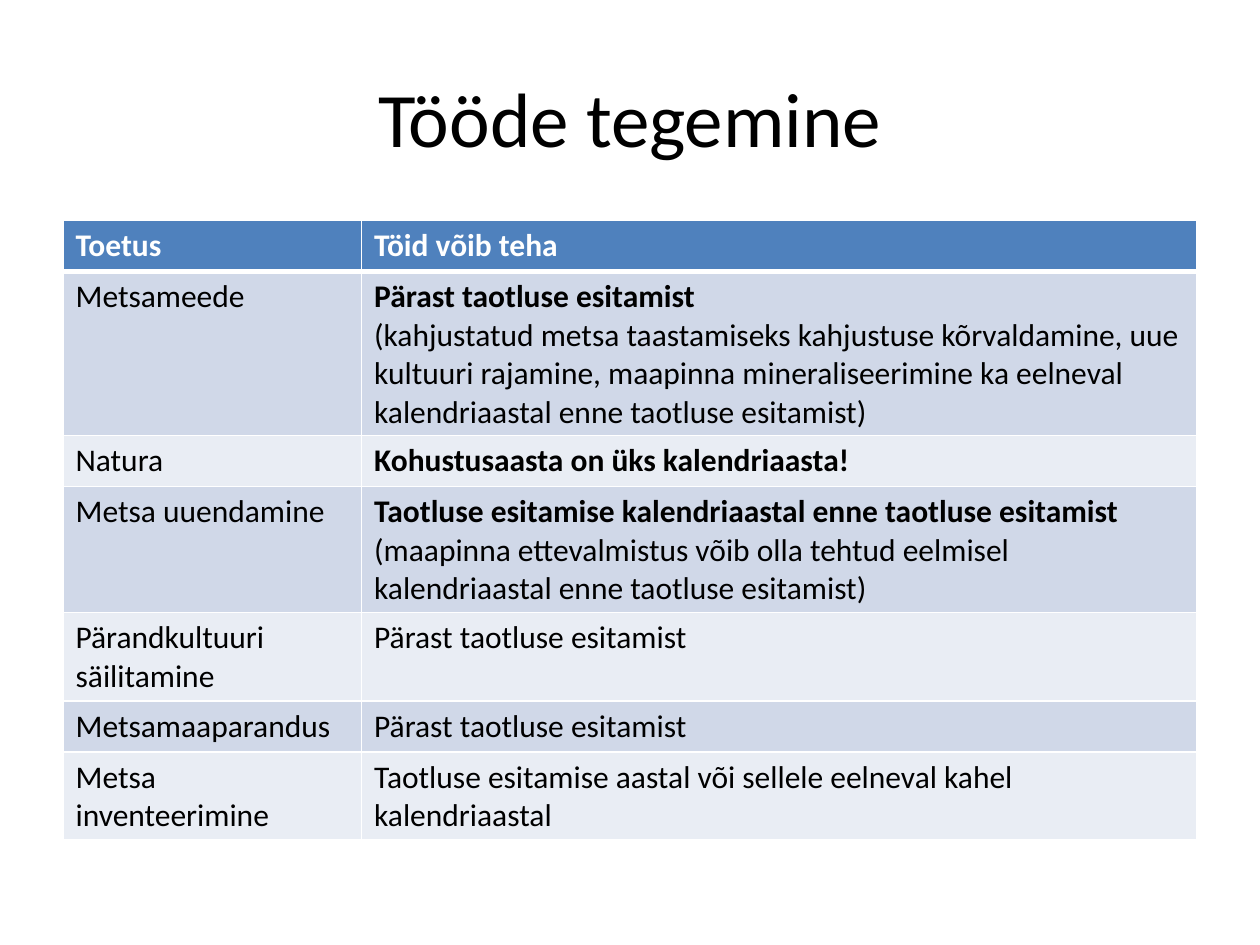
"""Build a slide with a table of when supported forestry work may be done."""
from typing import NamedTuple

import pptx
import pptx.dml.color
import pptx.enum.text
import pptx.oxml.ns
import pptx.util
from lxml import etree

Pt = pptx.util.Pt
FONT = "Calibri"
WHITE, BLACK = "FFFFFF", "000000"
HEADER_FILL = "4F81BD"
BAND_FILLS = ("D0D8E8", "E9EDF4")
COLUMN_WIDTHS = (170.64, 477.36)
ROW_HEIGHT = 29.2


class Support(NamedTuple):
    name: str
    timing: str
    detail: str = ""
    bold: bool = False


HEADER = Support("Toetus", "Töid võib teha", bold=True)
SUPPORTS = (
    Support("Metsameede", "Pärast taotluse esitamist",
            "(kahjustatud metsa taastamiseks kahjustuse kõrvaldamine, uue kultuuri "
            "rajamine, maapinna mineraliseerimine ka eelneval kalendriaastal enne "
            "taotluse esitamist)", True),
    Support("Natura", "Kohustusaasta on üks kalendriaasta!", bold=True),
    Support("Metsa uuendamine", "Taotluse esitamise kalendriaastal enne taotluse esitamist",
            "(maapinna ettevalmistus võib olla tehtud eelmisel kalendriaastal enne "
            "taotluse esitamist)", True),
    Support("Pärandkultuuri säilitamine", "Pärast taotluse esitamist"),
    Support("Metsamaaparandus", "Pärast taotluse esitamist"),
    Support("Metsa inventeerimine",
            "Taotluse esitamise aastal või sellele eelneval kahel kalendriaastal"),
)


def rgb(value: str) -> pptx.dml.color.RGBColor:
    return pptx.dml.color.RGBColor.from_string(value)


def write(p, text: str, *, size: float = 18, color: str = BLACK, bold: bool = False,
          align=pptx.enum.text.PP_ALIGN.LEFT) -> None:
    p.alignment = align
    r = p.add_run()
    r.text = text
    r.font.name, r.font.size, r.font.bold = FONT, Pt(size), bold
    r.font.color.rgb = rgb(color)


def add_border(cell, side: str, width: float) -> None:
    qn = pptx.oxml.ns.qn
    tc_pr = cell._tc.get_or_add_tcPr()
    ln = etree.SubElement(tc_pr, qn(f"a:ln{side}"), w=str(Pt(width)))
    fill = etree.SubElement(ln, qn("a:solidFill"))
    etree.SubElement(fill, qn("a:srgbClr"), val=WHITE)


def style_cell(cell, row: int) -> None:
    heavy = {0: "B", 1: "T"}.get(row)
    for side in "LRTB":
        add_border(cell, side, 3 if side == heavy else 1)
    cell.fill.solid()
    cell.fill.fore_color.rgb = rgb(BAND_FILLS[(row - 1) % 2] if row else HEADER_FILL)


def add_title(s, text: str) -> None:
    tf = s.shapes.add_textbox(Pt(36), Pt(21.6), Pt(648), Pt(90)).text_frame
    tf.word_wrap = True
    tf.vertical_anchor = pptx.enum.text.MSO_ANCHOR.MIDDLE
    write(tf.paragraphs[0], text, size=44, align=pptx.enum.text.PP_ALIGN.CENTER)


def add_support_table(s, supports: tuple[Support, ...]) -> None:
    rows = (HEADER, *supports)
    table = s.shapes.add_table(len(rows), len(COLUMN_WIDTHS), Pt(36), Pt(126),
                               Pt(sum(COLUMN_WIDTHS)), Pt(ROW_HEIGHT * len(rows))).table
    for column, width in zip(table.columns, COLUMN_WIDTHS):
        column.width = Pt(width)
    for i, support in enumerate(rows):
        table.rows[i].height = Pt(ROW_HEIGHT)
        name, timing = table.cell(i, 0), table.cell(i, 1)
        for cell in (name, timing):
            style_cell(cell, i)
        color = BLACK if i else WHITE
        write(name.text_frame.paragraphs[0], support.name, color=color, bold=i == 0)
        tf = timing.text_frame
        write(tf.paragraphs[0], support.timing, color=color, bold=support.bold)
        if support.detail:
            write(tf.add_paragraph(), support.detail, color=color)


def main() -> None:
    prs = pptx.Presentation()
    prs.slide_width, prs.slide_height = Pt(720), Pt(540)
    s = prs.slides.add_slide(prs.slide_layouts[6])
    add_title(s, "Tööde tegemine")
    add_support_table(s, SUPPORTS)
    prs.save("out.pptx")


if __name__ == "__main__":
    main()
